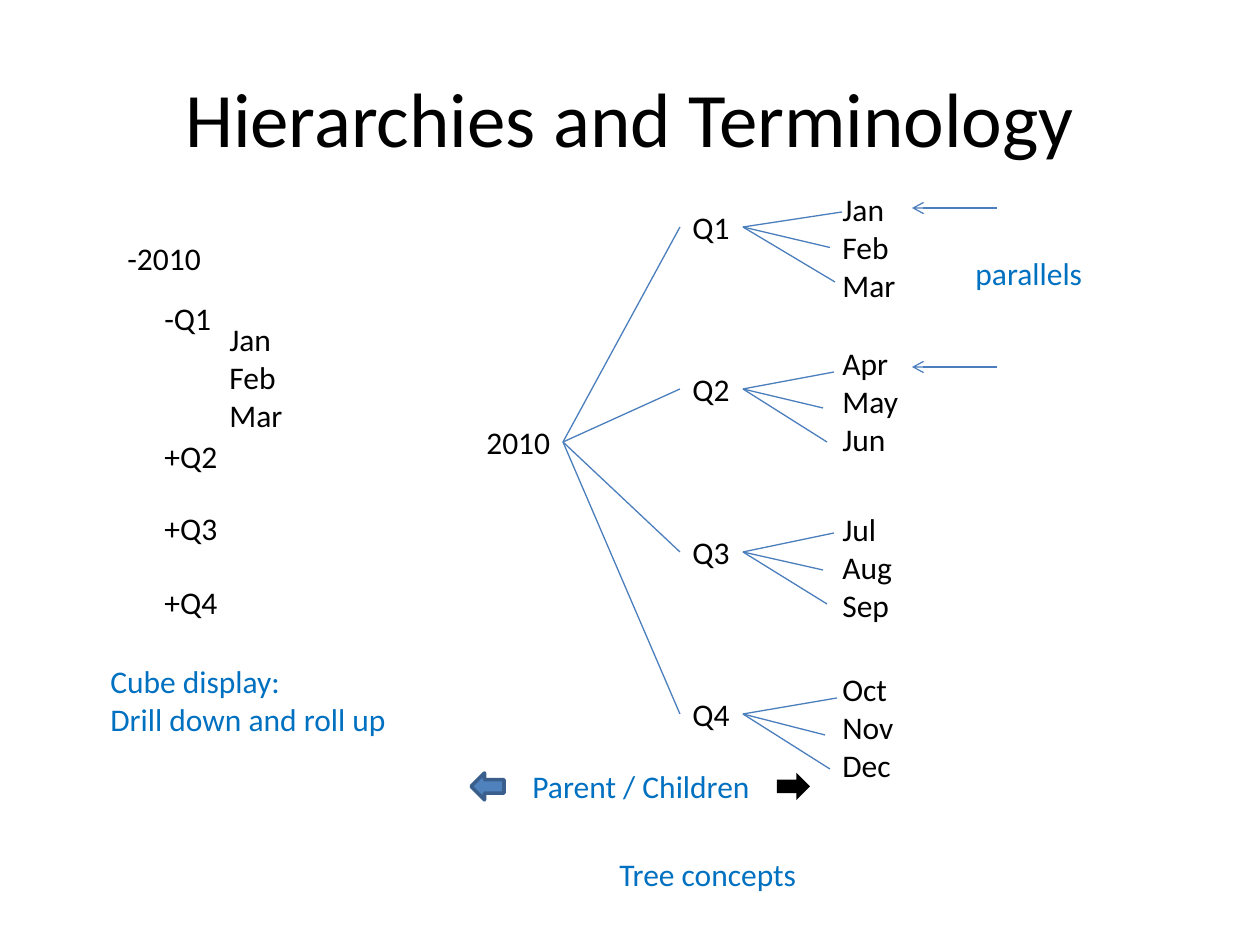
"""Build a slide showing a year, quarter and month hierarchy with its terminology."""
from dataclasses import dataclass

from lxml.etree import SubElement
from pptx import Presentation
from pptx.dml.color import RGBColor
from pptx.enum.shapes import MSO_CONNECTOR, MSO_SHAPE
from pptx.enum.text import MSO_ANCHOR, MSO_AUTO_SIZE, PP_ALIGN
from pptx.oxml.ns import qn
from pptx.util import Emu, Pt


@dataclass(frozen=True)
class Theme:
    font: str = "Calibri"
    title_size: int = 44
    body_size: int = 18
    ink: str = "000000"
    accent: str = "0070C0"
    branch: str = "4B7EBC"
    arrow_fill: str = "4F81BD"
    arrow_edge: str = "3A5F8C"
    branch_width: float = 0.75
    edge_width: int = 2


THEME = Theme()
SLIDE_SIZE = (1260, 945)
PX_PER_INCH = 126
LINE_HEIGHT = 50
MONTHS_HEIGHT = 127
QUARTER_LEFT, QUARTER_WIDTH = 680, 63
MONTHS_LEFT = 830

TITLE = ("Hierarchies and Terminology", (63, 38, 1134, 158))
YEAR = ("2010", (474, 417, 89, LINE_HEIGHT))
QUARTERS = [
    {"name": "Q1", "top": 202, "months": ["Jan", "Feb", "Mar"], "months_top": 184,
     "months_width": 79, "ends": [(842, 212), None, (835, 282)]},
    {"name": "Q2", "top": 364, "months": ["Apr", "May", "Jun"], "months_top": 338,
     "months_width": 82, "ends": [(834, 372), (823, 408), (827, 442)]},
    {"name": "Q3", "top": 527, "months": ["Jul", "Aug", "Sep"], "months_top": 504,
     "months_width": 76, "ends": [(834, 533), (823, 570), (827, 604)]},
    {"name": "Q4", "top": 689, "months": ["Oct", "Nov", "Dec"], "months_top": 664,
     "months_width": 77, "ends": [(837, 698), (825, 735), (830, 769)]},
]
CUBE_DISPLAY = [
    (["-2010"], (115, 233, 100, LINE_HEIGHT)),
    (["-Q1"], (152, 293, 73, LINE_HEIGHT)),
    (["Jan", "Feb", "Mar"], (217, 314, 79, MONTHS_HEIGHT)),
    (["+Q2"], (152, 431, 79, LINE_HEIGHT)),
    (["+Q3"], (152, 503, 79, LINE_HEIGHT)),
    (["+Q4"], (152, 577, 79, LINE_HEIGHT)),
]
TERMS = [
    (["Cube display:", "Drill down and roll up"], (98, 656, 305, 89)),
    (["Tree concepts"], (607, 849, 204, LINE_HEIGHT)),
    (["Parent / Children"], (520, 761, 246, LINE_HEIGHT)),
    (["parallels"], (963, 248, 133, LINE_HEIGHT)),
]
BLOCK_ARROWS = [
    (MSO_SHAPE.LEFT_ARROW, (471, 773, 33, 27), THEME.arrow_fill, THEME.arrow_edge),
    (MSO_SHAPE.RIGHT_ARROW, (777, 773, 33, 27), THEME.ink, None),
]
PARALLEL_START, PARALLEL_END = 997, 912
PARALLEL_ROWS = [208, 367]


def px(value):
    return Emu(round(value * 914400 / PX_PER_INCH))


def place(area):
    return [px(value) for value in area]


def color(code):
    return RGBColor.from_string(code)


def add_text(page, lines, area, ink=THEME.ink, size=THEME.body_size):
    box = page.shapes.add_textbox(*place(area))
    frame = box.text_frame
    frame.word_wrap = False
    frame.auto_size = MSO_AUTO_SIZE.SHAPE_TO_FIT_TEXT
    for index, line in enumerate(lines):
        para = frame.add_paragraph() if index else frame.paragraphs[0]
        span = para.add_run()
        span.text = line
        span.font.name = THEME.font
        span.font.size = Pt(size)
        span.font.color.rgb = color(ink)
    return box


def add_title(page):
    text, area = TITLE
    frame = add_text(page, [text], area, size=THEME.title_size).text_frame
    frame.word_wrap = True
    frame.auto_size = MSO_AUTO_SIZE.NONE
    frame.vertical_anchor = MSO_ANCHOR.MIDDLE
    frame.paragraphs[0].alignment = PP_ALIGN.CENTER


def add_line(page, start, end):
    line = page.shapes.add_connector(MSO_CONNECTOR.STRAIGHT, *place(start + end))
    line.line.color.rgb = color(THEME.branch)
    line.line.width = Pt(THEME.branch_width)
    SubElement(line._element.spPr, qn("a:effectLst"))
    return line


def add_branch(page, parent, child, end=None):
    line = add_line(page, (0, 0), end or (0, 0))
    line.begin_connect(parent, 3)
    if end is None:
        line.end_connect(child, 1)


def add_tree(page):
    year_text, year_area = YEAR
    year = add_text(page, [year_text], year_area)
    for quarter in QUARTERS:
        parent = add_text(page, [quarter["name"]],
                          (QUARTER_LEFT, quarter["top"], QUARTER_WIDTH, LINE_HEIGHT))
        months = add_text(page, quarter["months"],
                          (MONTHS_LEFT, quarter["months_top"],
                           quarter["months_width"], MONTHS_HEIGHT))
        add_branch(page, year, parent)
        for end in quarter["ends"]:
            add_branch(page, parent, months, end)


def add_block_arrow(page, preset, area, fill, edge):
    arrow = page.shapes.add_shape(preset, *place(area))
    arrow.shadow.inherit = False
    arrow.fill.solid()
    arrow.fill.fore_color.rgb = color(fill)
    if edge:
        arrow.line.color.rgb = color(edge)
        arrow.line.width = Pt(THEME.edge_width)
    else:
        arrow.line.fill.background()


def add_parallel(page, row):
    line = add_line(page, (PARALLEL_START, row), (PARALLEL_END, row))
    SubElement(line.line._get_or_add_ln(), qn("a:tailEnd"), type="arrow")


def main():
    deck = Presentation()
    deck.slide_width, deck.slide_height = place(SLIDE_SIZE)
    page = deck.slides.add_slide(deck.slide_layouts[6])
    add_title(page)
    add_tree(page)
    for lines, area in CUBE_DISPLAY:
        add_text(page, lines, area)
    for lines, area in TERMS:
        add_text(page, lines, area, ink=THEME.accent)
    for block_arrow in BLOCK_ARROWS:
        add_block_arrow(page, *block_arrow)
    for row in PARALLEL_ROWS:
        add_parallel(page, row)
    deck.save("out.pptx")


if __name__ == "__main__":
    main()
